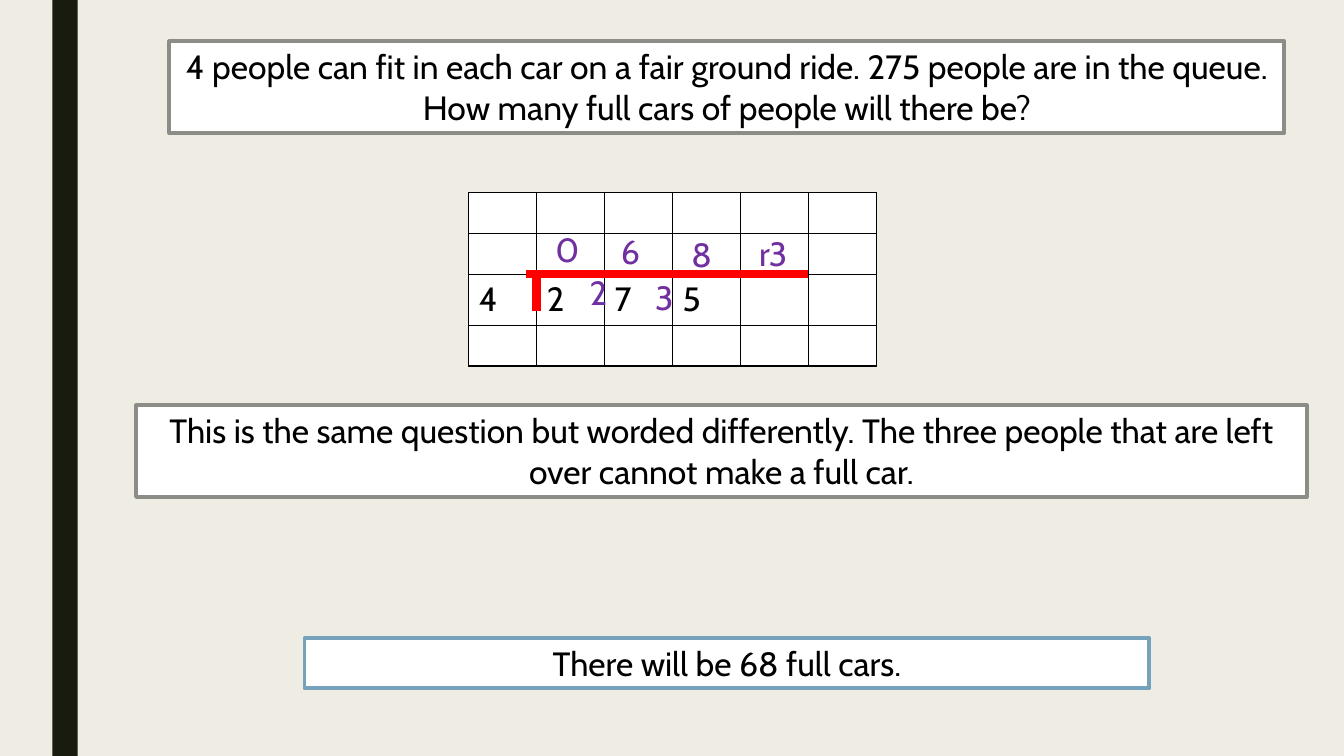
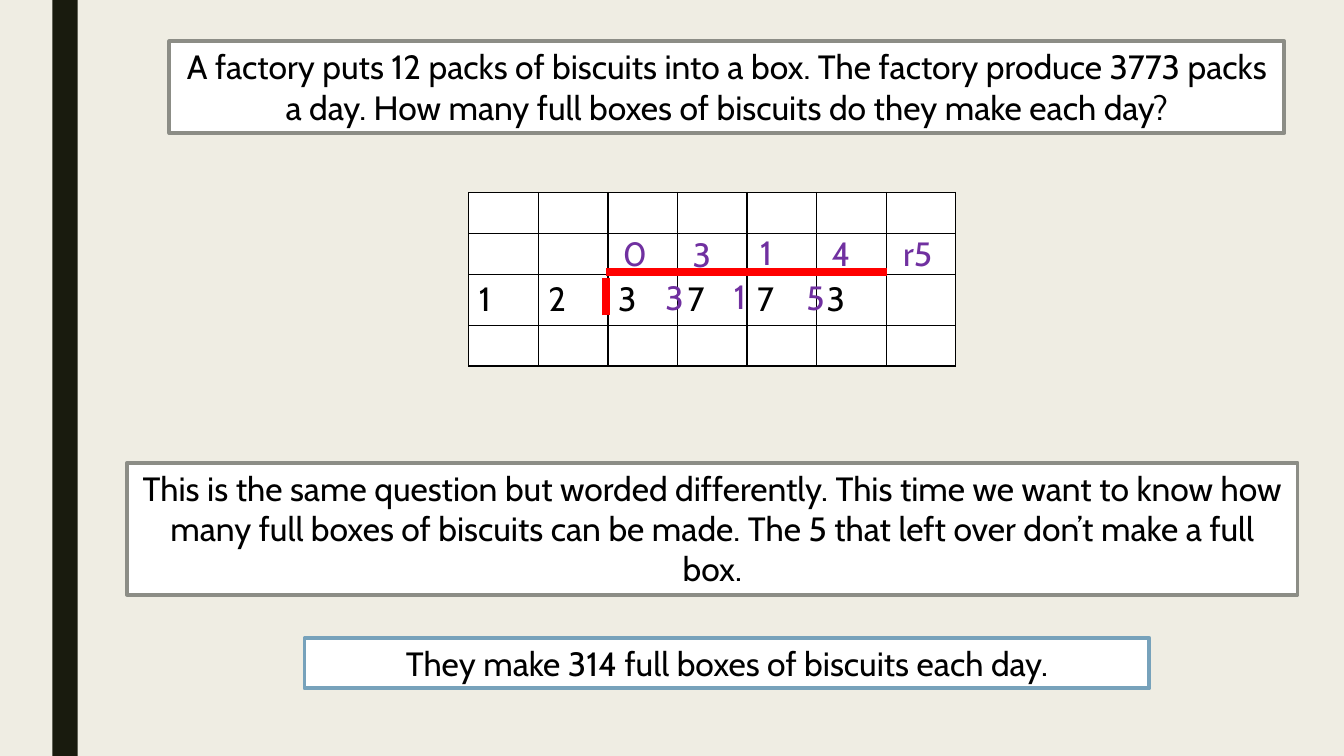
"""Build two worked long-division word problems as slides."""
import dataclasses

import pptx
import pptx.dml.color
import pptx.enum.shapes
import pptx.enum.text
import pptx.oxml
import pptx.oxml.ns
import pptx.util
from pptx.util import Inches


@dataclasses.dataclass(frozen=True)
class Theme:
    """Colours, font and sizes shared by the slides."""
    background: str = "EFEDE3"
    band: str = "191B0E"
    paper: str = "FFFFFF"
    ink: str = "000000"
    working: str = "7030A0"
    bracket: str = "FF0000"
    question: str = "8C8D86"
    answer: str = "77A2BB"
    font: str = "Cabin"
    size: float = 24
    empty_size: float = 18
    box_line: float = 2.75
    bracket_line: float = 6
    grid_line: float = 1


class DivisionDeck:
    """Hold the style and the current slide."""

    def __init__(self, theme):
        """Start a widescreen deck with a plain background."""
        self.theme = theme
        self.deck = pptx.Presentation()
        self.deck.slide_width = Inches(13.33)
        self.deck.slide_height = Inches(7.5)
        self.page = None
        self.paint(self.deck.slide_master.background.fill, theme.background)

    @staticmethod
    def paint(fill, colour):
        """Give a fill one solid colour."""
        fill.solid()
        fill.fore_color.rgb = pptx.dml.color.RGBColor.from_string(colour)

    def set_text(self, frame, text, colour, centred=False):
        """Put one styled paragraph into a text frame."""
        frame.word_wrap = True
        frame.vertical_anchor = pptx.enum.text.MSO_ANCHOR.TOP
        para = frame.paragraphs[0]
        para.text = text
        align = pptx.enum.text.PP_ALIGN
        para.alignment = align.CENTER if centred else align.LEFT
        para.font.name = self.theme.font
        para.font.size = pptx.util.Pt(self.theme.size if text else self.theme.empty_size)
        para.font.color.rgb = pptx.dml.color.RGBColor.from_string(colour)

    def add_page(self):
        """Start a slide with the dark side band."""
        self.page = self.deck.slides.add_slide(self.deck.slide_layouts[6])
        self.add_rectangle(0.52, 0, 0.25, 7.5, self.theme.band)

    def add_rectangle(self, left, top, width, height, colour):
        """Add a flat rectangle without an outline."""
        shape = self.page.shapes.add_shape(
            pptx.enum.shapes.MSO_SHAPE.RECTANGLE,
            Inches(left), Inches(top), Inches(width), Inches(height))
        shape.shadow.inherit = False
        self.paint(shape.fill, colour)
        shape.line.fill.background()
        return shape

    def add_box(self, left, top, width, height, text, outline):
        """Add a white outlined box with centred text."""
        box = self.add_rectangle(left, top, width, height, self.theme.paper)
        self.paint(box.line.fill, outline)
        box.line.width = pptx.util.Pt(self.theme.box_line)
        self.set_text(box.text_frame, text, self.theme.ink, centred=True)

    def add_digit(self, text, left, top):
        """Add one working digit."""
        box = self.page.shapes.add_textbox(
            Inches(left), Inches(top), Inches(0.71), Inches(0.5))
        self.set_text(box.text_frame, text, self.theme.working)

    def add_bracket_line(self, start_x, start_y, end_x, end_y):
        """Add one thick stroke of the division bracket."""
        line = self.page.shapes.add_connector(
            pptx.enum.shapes.MSO_CONNECTOR.STRAIGHT,
            Inches(start_x), Inches(start_y), Inches(end_x), Inches(end_y))
        self.paint(line.line.fill, self.theme.bracket)
        line.line.width = pptx.util.Pt(self.theme.bracket_line)
        line._element.spPr.append(pptx.oxml.parse_xml(
            f"<a:effectLst {pptx.oxml.ns.nsdecls('a')}/>"))

    def add_borders(self, cell):
        """Draw a thin line on all four sides of a cell."""
        properties = cell._tc.get_or_add_tcPr()
        for side in "LRTB":
            properties.append(pptx.oxml.parse_xml(
                f"<a:ln{side} {pptx.oxml.ns.nsdecls('a')}"
                f' w="{pptx.util.Pt(self.theme.grid_line)}"><a:solidFill>'
                f'<a:srgbClr val="{self.theme.ink}"/></a:solidFill></a:ln{side}>'))

    def add_grid(self, digits, columns, width):
        """Add squared paper with the sum on its third row."""
        heights = (0.4, 0.4, 0.5, 0.4)
        table = self.page.shapes.add_table(
            len(heights), columns, Inches(4.65), Inches(1.91),
            Inches(width), Inches(sum(heights))).table
        table.first_row = table.horz_banding = False
        for column in table.columns:
            column.width = Inches(width / columns)
        for row, height in zip(table.rows, heights):
            row.height = Inches(height)
        for index, cell in enumerate(table.iter_cells()):
            row, column = divmod(index, columns)
            text = digits[column] if row == 2 and column < len(digits) else ""
            self.set_text(cell.text_frame, text, self.theme.ink)
            self.add_borders(cell)
            self.paint(cell.fill, self.theme.paper)

    def add_problem(self, question, grid, bracket, working, reason, reason_box, answer):
        """Lay out a whole worked problem on a new slide."""
        self.add_page()
        self.add_box(1.68, 0.41, 11.06, 0.91, question, self.theme.question)
        self.add_grid(*grid)
        for stroke in bracket:
            self.add_bracket_line(*stroke)
        self.add_box(*reason_box, reason, self.theme.question)
        self.add_box(3.02, 6.33, 8.38, 0.5, answer, self.theme.answer)
        for digit in working:
            self.add_digit(*digit)


PROBLEMS = [
    dict(
        question="4 people can fit in each car on a fair ground ride. 275 people are "
                 "in the queue. How many full cars of people will there be?",
        grid=("4275", 6, 4.04),
        bracket=[(5.32, 3.09, 5.32, 2.72), (8.01, 2.72, 5.22, 2.72)],
        working=[("0", 5.41, 2.22), ("2", 5.75, 2.65), ("6", 6.06, 2.24),
                 ("3", 6.4, 2.7), ("8", 6.76, 2.27), ("r3", 7.43, 2.26)],
        reason="This is the same question but worded differently. The three people "
               "that are left over cannot make a full car.",
        reason_box=(1.35, 4.02, 11.61, 0.91),
        answer="There will be 68 full cars.",
    ),
    dict(
        question="A factory puts 12 packs of biscuits into a box. The factory produce "
                 "3773 packs a day. How many full boxes of biscuits do they make each day?",
        grid=("123773", 7, 4.83),
        bracket=[(6.01, 3.13, 6.01, 2.76), (8.8, 2.7, 6.01, 2.7)],
        working=[("0", 6.08, 2.26), ("3", 6.5, 2.7), ("3", 6.77, 2.27),
                 ("1", 7.18, 2.69), ("1", 7.44, 2.25), ("5", 7.9, 2.7),
                 ("4", 8.15, 2.26), ("r5", 8.86, 2.26)],
        reason="This is the same question but worded differently. This time we want to "
               "know how many full boxes of biscuits can be made. The 5 that left over "
               "don’t make a full box.",
        reason_box=(1.26, 4.59, 11.61, 1.31),
        answer="They make 314 full boxes of biscuits each day.",
    ),
]


def main():
    """Build and save the deck."""
    builder = DivisionDeck(Theme())
    for problem in PROBLEMS:
        builder.add_problem(**problem)
    builder.deck.save("out.pptx")


if __name__ == "__main__":
    main()
